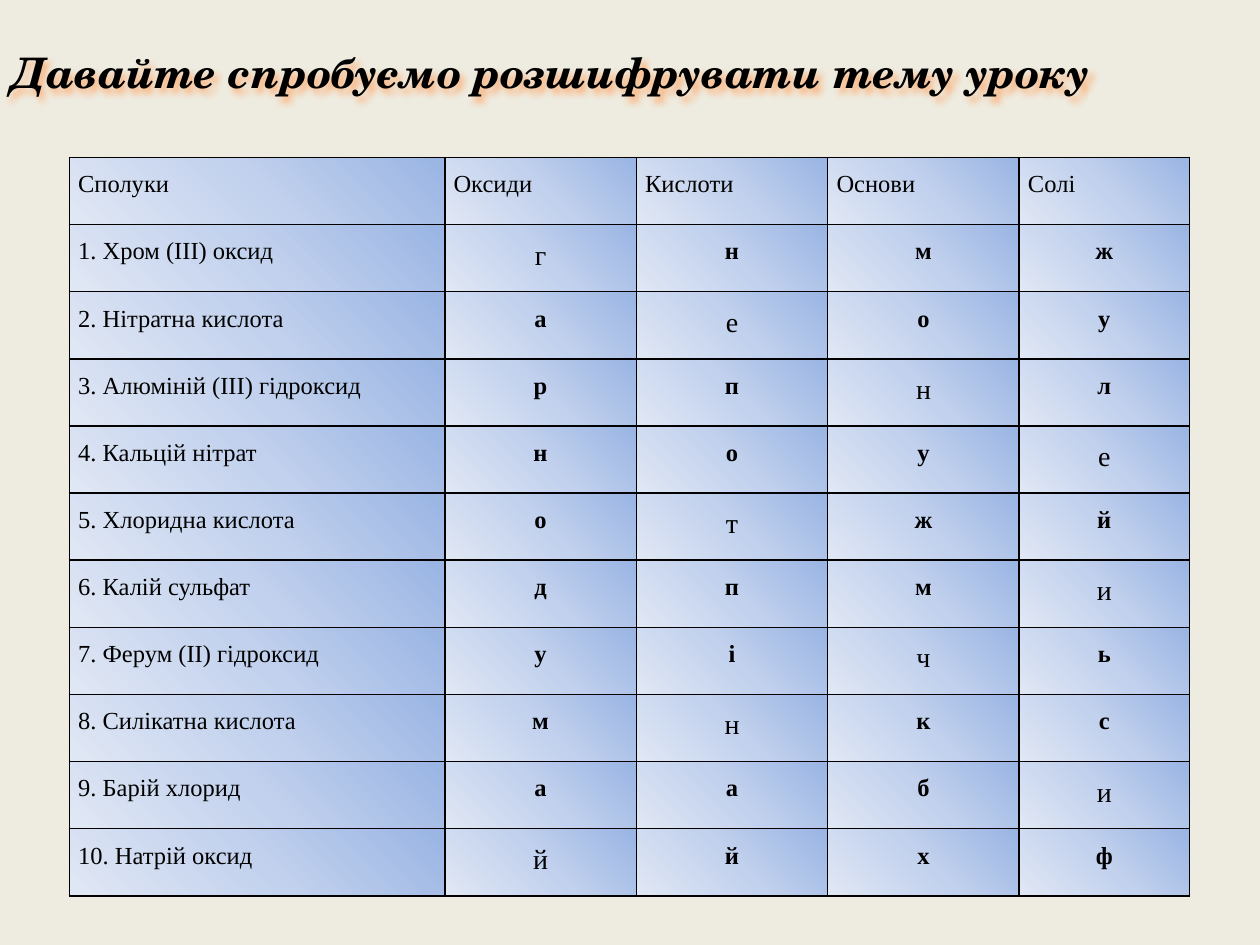
from lxml.etree import SubElement
from pptx import Presentation
from pptx.dml.color import RGBColor
from pptx.enum.text import MSO_ANCHOR, PP_ALIGN
from pptx.oxml.ns import qn
from pptx.util import Inches, Pt

BACKGROUND = RGBColor(0xEE, 0xEC, 0xE1)
BLACK = RGBColor(0x00, 0x00, 0x00)
TITLE_SHADOW = RGBColor(0xFA, 0xB4, 0x80)
CELL_GRADIENT = [
    (0, RGBColor(0x9A, 0xB5, 0xE4)),
    (50, RGBColor(0xC2, 0xD1, 0xED)),
    (100, RGBColor(0xE1, 0xE8, 0xF5)),
]

TITLE_FONT = "TeX Gyre Schola"
TABLE_FONT = "Times New Roman"

TITLE = "Давайте cпробуємо розшифрувати тему уроку"
HEADERS = ["Сполуки", "Оксиди", "Кислоти", "Основи", "Солі"]
OXIDE, ACID, BASE, SALT = 1, 2, 3, 4
# Compound, letters of the four classes, class of the compound
COMPOUNDS = [
    ("1. Хром (ІІІ) оксид", "гнмж", OXIDE),
    ("2. Нітратна кислота", "аеоу", ACID),
    ("3. Алюміній (ІІІ) гідроксид", "рпнл", BASE),
    ("4. Кальцій нітрат", "ноуе", SALT),
    ("5. Хлоридна кислота", "отжй", ACID),
    ("6. Калій сульфат", "дпми", SALT),
    ("7. Ферум (ІІ) гідроксид", "уічь", BASE),
    ("8. Силікатна кислота", "мнкс", ACID),
    ("9. Барій хлорид", "ааби", SALT),
    ("10. Натрій оксид", "ййхф", OXIDE),
]
COLUMN_WIDTHS = [2.98, 1.52, 1.52, 1.52, 1.35]
TABLE_HEIGHT = 5.86


def add_color(parent, color):
    return SubElement(parent, qn("a:srgbClr"), val=str(color))


def style_run(run, font_name, size, bold=False, italic=False):
    font = run.font
    font.name = font_name
    font.size = Pt(size)
    font.bold = bold
    font.italic = italic
    font.color.rgb = BLACK


def add_title(slide):
    title = slide.shapes.title
    title.left, title.top = Inches(0), Inches(0.16)
    title.width, title.height = Inches(9.84), Inches(0.82)
    frame = title.text_frame
    frame.text = TITLE
    frame.word_wrap = True
    frame.vertical_anchor = MSO_ANCHOR.MIDDLE
    paragraph = frame.paragraphs[0]
    paragraph.alignment = PP_ALIGN.JUSTIFY
    style_run(paragraph.runs[0], TITLE_FONT, 24, bold=True, italic=True)

    effects = SubElement(title._element.spPr, qn("a:effectLst"))
    shadow = SubElement(effects, qn("a:outerShdw"), blurRad=str(Pt(4)),
                        dist=str(Pt(3)), dir="2700000", algn="tl")
    add_color(shadow, TITLE_SHADOW)


def add_borders(cell):
    properties = cell._tc.get_or_add_tcPr()
    for side in ("lnL", "lnR", "lnT", "lnB"):
        line = SubElement(properties, qn(f"a:{side}"), w=str(Pt(1)))
        add_color(SubElement(line, qn("a:solidFill")), BLACK)


def add_radial_fill(cell):
    """Fill the cell with a gradient that spreads from its top right corner."""
    gradient = SubElement(cell._tc.get_or_add_tcPr(), qn("a:gradFill"))
    stops = SubElement(gradient, qn("a:gsLst"))
    for percent, color in CELL_GRADIENT:
        add_color(SubElement(stops, qn("a:gs"), pos=str(percent * 1000)), color)
    circle = SubElement(gradient, qn("a:path"), path="circle")
    SubElement(circle, qn("a:fillToRect"), l="100000", b="100000")


def fill_cell(cell, text, alignment, size=14, bold=False):
    cell.margin_left = cell.margin_right = Inches(0.07)
    cell.margin_top = cell.margin_bottom = 0
    cell.text_frame.text = text
    paragraph = cell.text_frame.paragraphs[0]
    paragraph.alignment = alignment
    paragraph.line_spacing = 1.5
    style_run(paragraph.runs[0], TABLE_FONT, size, bold)
    add_borders(cell)
    add_radial_fill(cell)


def add_compound_table(slide):
    row_count = len(COMPOUNDS) + 1
    table = slide.shapes.add_table(
        row_count, len(HEADERS), Inches(0.55), Inches(1.25),
        Inches(sum(COLUMN_WIDTHS)), Inches(TABLE_HEIGHT)).table
    table.first_row = False
    table.horz_banding = False
    for column, width in zip(table.columns, COLUMN_WIDTHS):
        column.width = Inches(width)
    for row in table.rows:
        row.height = Inches(TABLE_HEIGHT / row_count)

    for column, header in enumerate(HEADERS):
        fill_cell(table.cell(0, column), header, PP_ALIGN.JUSTIFY)
    for row, (compound, letters, answer) in enumerate(COMPOUNDS, start=1):
        fill_cell(table.cell(row, 0), compound, PP_ALIGN.LEFT)
        for column, letter in enumerate(letters, start=1):
            is_answer = column == answer
            fill_cell(table.cell(row, column), letter, PP_ALIGN.CENTER,
                      size=16 if is_answer else 14, bold=not is_answer)


def main():
    presentation = Presentation()
    presentation.slide_width = Inches(10)
    presentation.slide_height = Inches(7.5)
    slide = presentation.slides.add_slide(presentation.slide_layouts[5])
    slide.background.fill.solid()
    slide.background.fill.fore_color.rgb = BACKGROUND
    add_compound_table(slide)
    add_title(slide)
    presentation.save("out.pptx")


if __name__ == "__main__":
    main()
